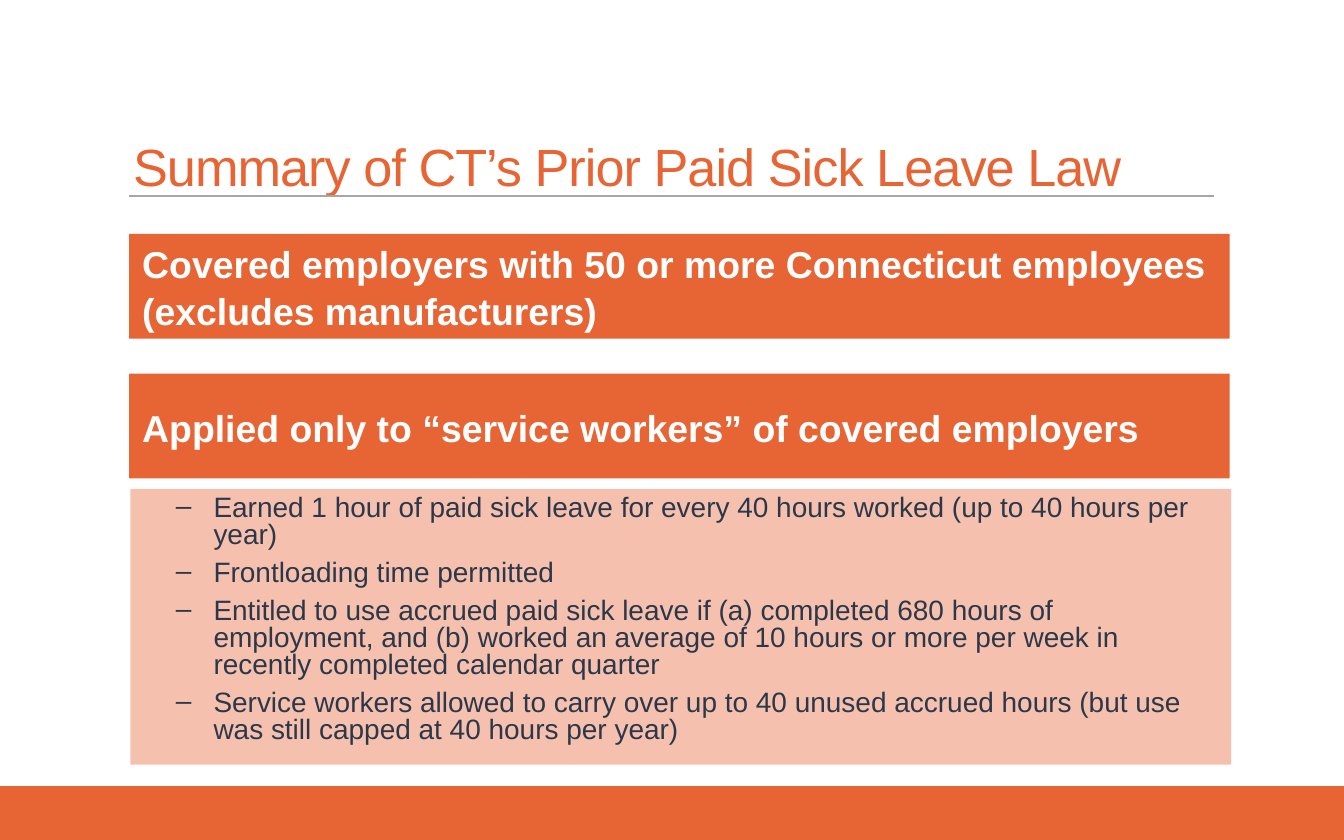
from lxml import etree
from pptx import Presentation
from pptx.dml.color import RGBColor
from pptx.enum.shapes import MSO_CONNECTOR, MSO_SHAPE
from pptx.enum.text import MSO_ANCHOR, MSO_AUTO_SIZE, PP_ALIGN
from pptx.oxml.ns import qn
from pptx.util import Inches, Pt

RECTANGLE = MSO_SHAPE.RECTANGLE
STRAIGHT = MSO_CONNECTOR.STRAIGHT
TOP, MIDDLE = MSO_ANCHOR.TOP, MSO_ANCHOR.MIDDLE
LEFT = PP_ALIGN.LEFT

THEME = {
    "font": "Arial",
    "orange": RGBColor.from_string("E76434"),
    "salmon": RGBColor.from_string("F5C1AE"),
    "rule": RGBColor.from_string("A6A6A6"),
    "ink": RGBColor.from_string("2C3849"),
    "white": RGBColor.from_string("FFFFFF"),
    "title": Pt(28),
    "banner": Pt(20),
    "body": Pt(15),
}


def add_panel(left, top, width, height, color, anchor=MIDDLE):
    shape = slide.shapes.add_shape(
        RECTANGLE, Inches(left), Inches(top), Inches(width), Inches(height))
    shape.shadow.inherit = False
    shape.fill.solid()
    shape.fill.fore_color.rgb = color
    shape.line.fill.background()
    shape.text_frame.word_wrap = True
    shape.text_frame.vertical_anchor = anchor
    return shape


def write(paragraph, text, size, color, bold=False, **spacing):
    run = paragraph.add_run()
    run.text = text
    font_format = {"name": THEME["font"], "size": THEME[size], "bold": bold}
    for name, value in font_format.items():
        setattr(run.font, name, value)
    run.font.color.rgb = THEME[color]
    for name, value in {"alignment": LEFT, **spacing}.items():
        setattr(paragraph, name, value)
    return run


presentation = Presentation()
presentation.slide_width = Inches(10)
presentation.slide_height = Inches(6.25)
slide = presentation.slides.add_slide(presentation.slide_layouts[5])

# Footer band and rule under the title
add_panel(0, 5.85, 10, 0.4, THEME["orange"])
rule = slide.shapes.add_connector(
    STRAIGHT, Inches(0.96), Inches(1.46), Inches(9.03), Inches(1.46))
rule.line.color.rgb = THEME["rule"]
rule.line.width = Pt(1)
etree.SubElement(rule._element.spPr, qn("a:effectLst"))

# Title
title = slide.shapes.title
title_place = {"left": 0.89, "top": 1.02, "width": 9.04, "height": 0.35}
for name, value in title_place.items():
    setattr(title, name, Inches(value))
title_format = {"word_wrap": True, "auto_size": MSO_AUTO_SIZE.NONE,
                "vertical_anchor": TOP}
for name, value in title_format.items():
    setattr(title.text_frame, name, value)
title_run = write(title.text_frame.paragraphs[0],
                  "Summary of CT’s Prior Paid Sick Leave Law",
                  "title", "orange", line_spacing=0.85)
title_run._r.get_or_add_rPr().set("spc", "-50")

# Banners
banners = [
    "Covered employers with 50 or more Connecticut employees (excludes manufacturers)",
    "Applied only to “service workers” of covered employers",
]
for index, text in enumerate(banners):
    banner = add_panel(0.96, 1.74 + index * 1.04, 8.19, 0.78, THEME["orange"])
    write(banner.text_frame.paragraphs[0], text, "banner", "white",
          bold=True, line_spacing=1.05)

# Provisions list
provisions = [
    "Earned 1 hour of paid sick leave for every 40 hours worked (up to 40 hours per year)",
    "Frontloading time permitted",
    "Entitled to use accrued paid sick leave if (a) completed 680 hours of employment, "
    "and (b) worked an average of 10 hours or more per week in recently completed "
    "calendar quarter",
    "Service workers allowed to carry over up to 40 unused accrued hours "
    "(but use was still capped at 40 hours per year)",
]
frame = add_panel(0.97, 3.64, 8.19, 2.05, THEME["salmon"], TOP).text_frame
frame.margin_right = Inches(0.2)
for index, text in enumerate(provisions):
    paragraph = frame.add_paragraph() if index else frame.paragraphs[0]
    properties = paragraph._p.get_or_add_pPr()
    properties.set("marL", str(Inches(0.52)))
    properties.set("indent", str(Inches(-0.28)))
    etree.SubElement(properties, qn("a:buFont"), typeface=THEME["font"])
    etree.SubElement(properties, qn("a:buChar"), char="–")
    write(paragraph, text, "body", "ink", line_spacing=0.8,
          space_before=Pt(2 if index else 0), space_after=Pt(4))

presentation.save("out.pptx")
